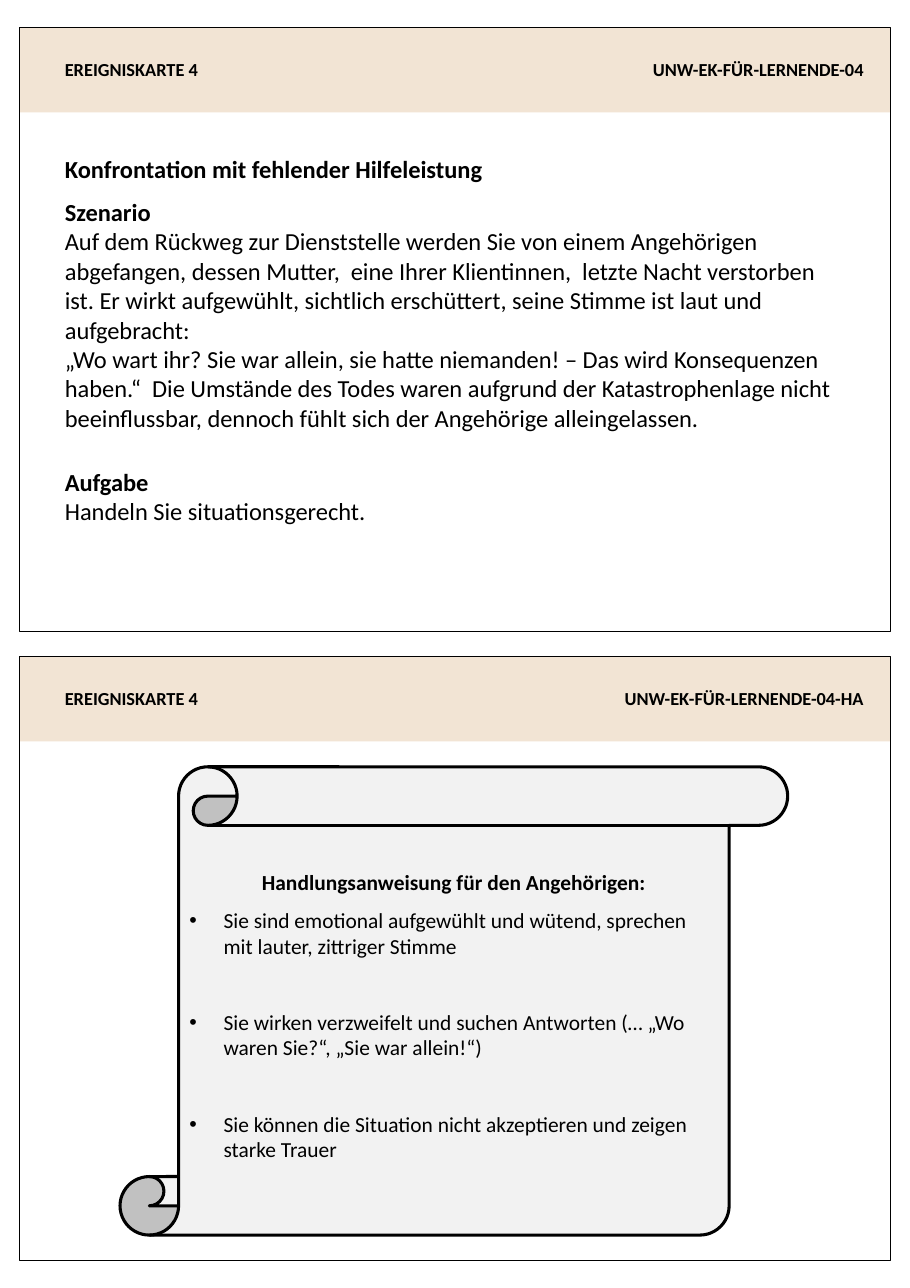
from lxml.etree import SubElement
from pptx import Presentation
from pptx.dml.color import RGBColor
from pptx.enum.shapes import MSO_SHAPE
from pptx.enum.text import MSO_ANCHOR, MSO_AUTO_SIZE, PP_ALIGN
from pptx.oxml.ns import qn
from pptx.util import Inches, Pt

BLACK = RGBColor(0x00, 0x00, 0x00)
SAND = RGBColor(0xF2, 0xE4, 0xD4)
PAPER = RGBColor(0xF2, 0xF2, 0xF2)

CARD_LEFT, CARD_WIDTH, CARD_HEIGHT = 0.18, 7.9, 5.48
CARD_TOPS = (0.25, 5.96)
HEADER_HEIGHT = 0.77
TEXT_LEFT = 0.49

SCENARIO = (
    "Auf dem Rückweg zur Dienststelle werden Sie von einem Angehörigen abgefangen, "
    "dessen Mutter,  eine Ihrer Klientinnen,  letzte Nacht verstorben ist. Er wirkt "
    "aufgewühlt, sichtlich erschüttert, seine Stimme ist laut und aufgebracht:",
    "„Wo wart ihr? Sie war allein, sie hatte niemanden! – Das wird Konsequenzen "
    "haben.“  Die Umstände des Todes waren aufgrund der Katastrophenlage nicht "
    "beeinflussbar, dennoch fühlt sich der Angehörige alleingelassen.",
)
INSTRUCTIONS = (
    "Sie sind emotional aufgewühlt und wütend, sprechen mit lauter, zittriger Stimme",
    "Sie wirken verzweifelt und suchen Antworten (… „Wo waren Sie?“, „Sie war allein!“)",
    "Sie können die Situation nicht akzeptieren und zeigen starke Trauer",
)


def write_span(para, text, size, bold=False):
    span = para.add_run()
    span.text = text
    font_format = {"name": "Calibri", "size": Pt(size), "bold": bold}
    for name, value in font_format.items():
        setattr(span.font, name, value)
    span.font.color.rgb = BLACK


def next_para(frame, index):
    return frame.paragraphs[0] if index == 0 else frame.add_paragraph()


def add_bullet(para):
    properties = para._p.get_or_add_pPr()
    properties.set("marL", str(Inches(0.31)))
    properties.set("indent", str(Inches(-0.31)))
    SubElement(properties, qn("a:buFont")).set("typeface", "Arial")
    SubElement(properties, qn("a:buChar")).set("char", "•")


def add_figure(page, kind, left, top, width, height, fill=None, line_width=None):
    shape = page.shapes.add_shape(
        kind, Inches(left), Inches(top), Inches(width), Inches(height))
    shape.shadow.inherit = False
    if fill is None:
        shape.fill.background()
    else:
        shape.fill.solid()
        shape.fill.fore_color.rgb = fill
    if line_width is None:
        shape.line.fill.background()
    else:
        shape.line.color.rgb = BLACK
        shape.line.width = Pt(line_width)
    return shape


def add_text(page, left, top, width, height, size, heading, body=(),
             align=PP_ALIGN.LEFT):
    box = page.shapes.add_textbox(
        Inches(left), Inches(top), Inches(width), Inches(height))
    frame = box.text_frame
    frame_format = {"word_wrap": True, "auto_size": MSO_AUTO_SIZE.SHAPE_TO_FIT_TEXT}
    for name, value in frame_format.items():
        setattr(frame, name, value)
    for index, text in enumerate((heading, *body)):
        para = next_para(frame, index)
        para.alignment = align
        write_span(para, text, size, bold=index == 0)


def add_card(page, top, code):
    add_figure(page, MSO_SHAPE.RECTANGLE, CARD_LEFT, top, CARD_WIDTH,
               HEADER_HEIGHT, fill=SAND)
    add_figure(page, MSO_SHAPE.RECTANGLE, CARD_LEFT, top, CARD_WIDTH,
               CARD_HEIGHT, line_width=0.75)
    label_top = top + 0.23
    add_text(page, 4.63, label_top, 3.31, 0.3, 12, code, align=PP_ALIGN.RIGHT)
    add_text(page, TEXT_LEFT, label_top, 4, 0.3, 12, "EREIGNISKARTE 4")


def add_scroll(page, heading, items):
    scroll = add_figure(page, MSO_SHAPE.VERTICAL_SCROLL, 1.09, 6.96, 6.06, 4.25,
                        fill=PAPER, line_width=2)
    frame = scroll.text_frame
    frame.word_wrap = True
    frame.vertical_anchor = MSO_ANCHOR.MIDDLE
    for index, text in enumerate((heading, *items)):
        para = next_para(frame, index)
        para.alignment = PP_ALIGN.LEFT if index else PP_ALIGN.CENTER
        if index:
            add_bullet(para)
        # Wide gaps only between the bullets
        para.space_after = Pt(33 if 0 < index < len(items) else 8)
        write_span(para, text, 14, bold=index == 0)


def main():
    deck = Presentation()
    deck.slide_width = Inches(8.26)
    deck.slide_height = Inches(11.69)
    page = deck.slides.add_slide(deck.slide_layouts[6])

    # Both card frames with their header bands
    codes = ("UNW-EK-FÜR-LERNENDE-04", "UNW-EK-FÜR-LERNENDE-04-HA")
    for top, code in zip(CARD_TOPS, codes):
        add_card(page, top, code)

    # Upper card: scenario and task
    add_text(page, TEXT_LEFT, 1.35, 6.95, 0.37, 16,
             "Konfrontation mit fehlender Hilfeleistung")
    add_text(page, TEXT_LEFT, 1.74, 7.25, 2.26, 16, "Szenario", SCENARIO)
    add_text(page, TEXT_LEFT, 4.19, 6.95, 0.64, 16, "Aufgabe",
             ("Handeln Sie situationsgerecht.",))

    # Lower card: instructions on the scroll
    add_scroll(page, "Handlungsanweisung für den Angehörigen:", INSTRUCTIONS)

    deck.save("out.pptx")


if __name__ == "__main__":
    main()
